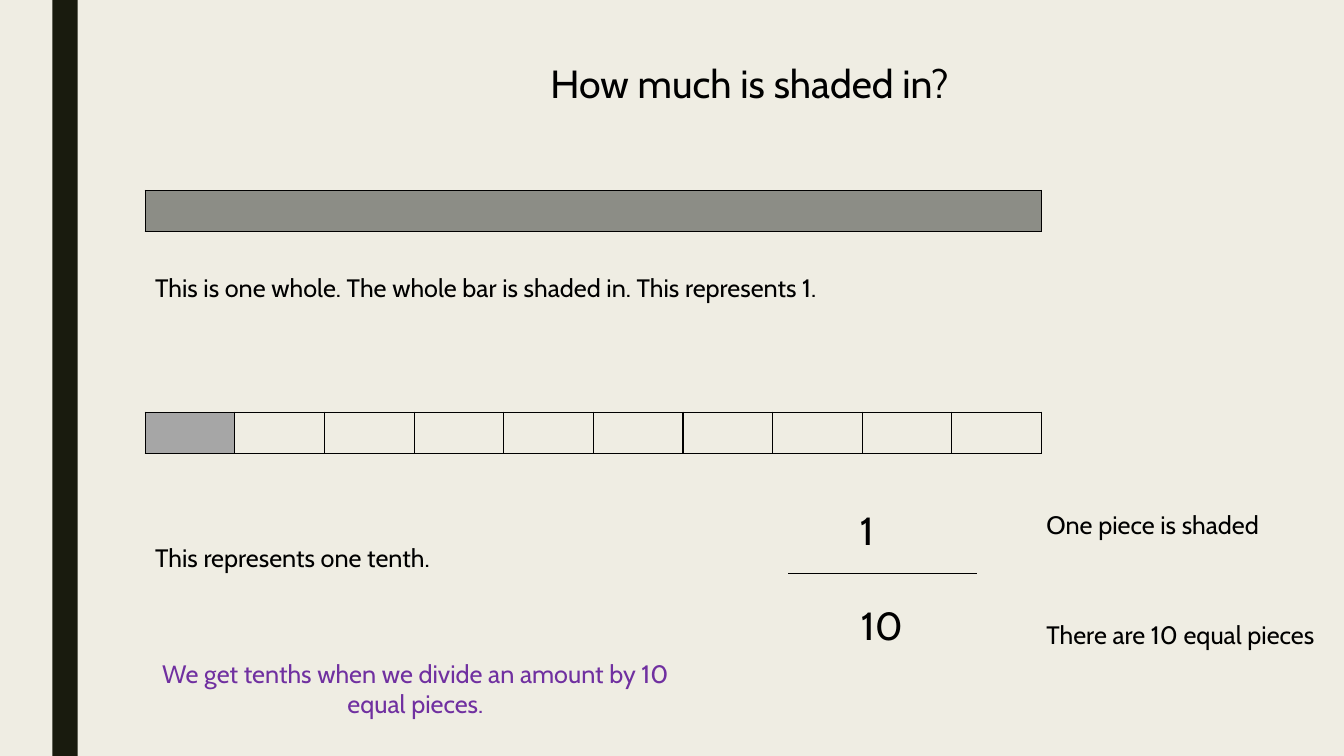
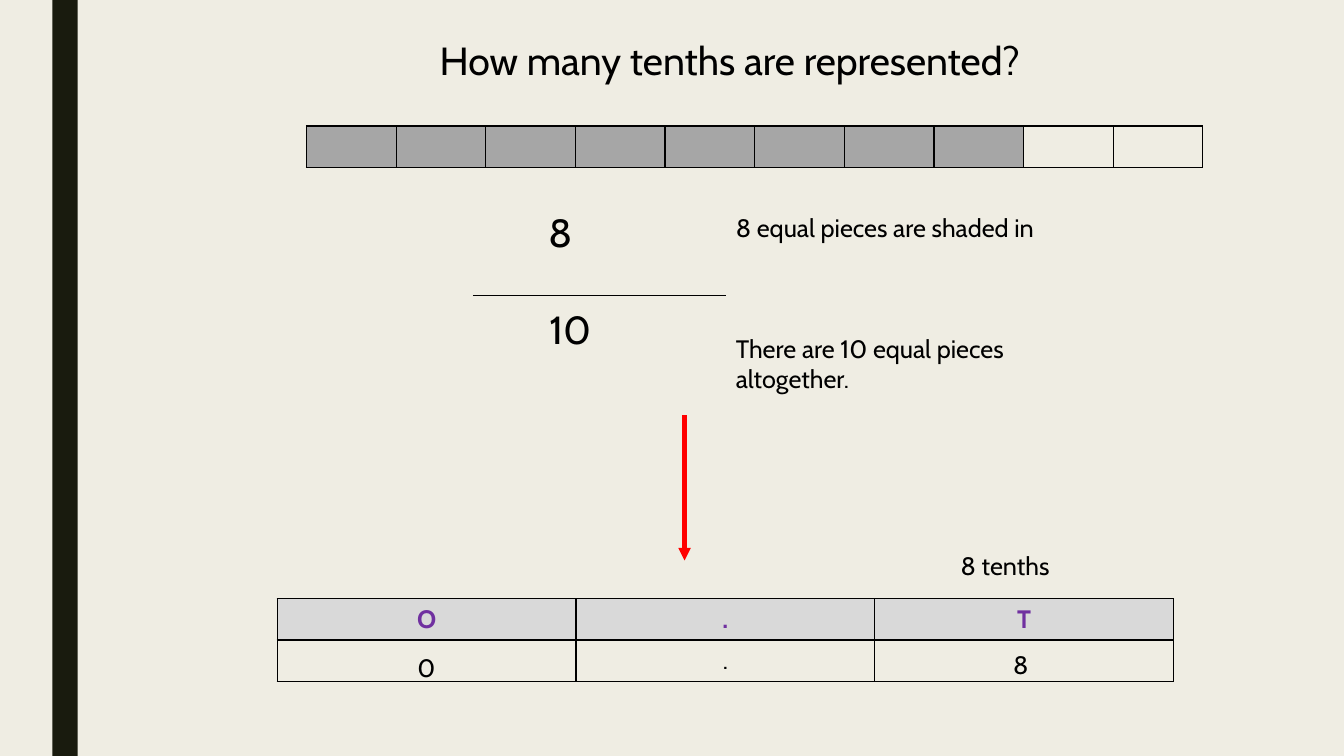
from lxml import etree
from pptx import Presentation
from pptx import util as u
from pptx.dml.color import RGBColor
from pptx.enum import shapes, text
from pptx.oxml import parse_xml
from pptx.oxml.ns import nsdecls, qn

Inches, Pt = u.Inches, u.Pt
rgb = RGBColor.from_string
CREAM, DARK, BLACK, PURPLE, RED = "EFEDE3", "191B0E", "000000", "7030A0", "FF0000"
WHOLE, SHADED, HEADER = "8C8D86", "A6A6A6", "D9D9D9"
LARGE, BODY = 28, 18
BAR_WIDTH, ROW_HEIGHT = 8.89, 0.41
LEFT, CENTER = text.PP_ALIGN.LEFT, text.PP_ALIGN.CENTER


def write(frame, words, size=BODY, color=BLACK, align=LEFT, bold=False):
    """Put one formatted line of words into a text frame."""
    para = frame.paragraphs[0]
    para.alignment = align
    span = para.add_run()
    span.text = words
    values = {"name": "Cabin", "size": Pt(size), "bold": bold}
    for name, value in values.items():
        setattr(span.font, name, value)
    span.font.color.rgb = rgb(color)


def add_grid(page, left, top, fills):
    """Add a bordered table; fills holds one list of cell colours per row, None for no fill."""
    rows, columns = len(fills), len(fills[0])
    table = page.shapes.add_table(rows, columns, Inches(left), Inches(top),
                                  Inches(BAR_WIDTH), Inches(ROW_HEIGHT * rows)).table
    table.first_row = table.horz_banding = False
    for column in table.columns:
        column.width = Inches(BAR_WIDTH / columns)
    for row, row_fills in zip(table.rows, fills):
        row.height = Inches(ROW_HEIGHT)
        for cell, fill in zip(row.cells, row_fills):
            borders = cell._tc.get_or_add_tcPr()
            for side in ("lnL", "lnR", "lnT", "lnB"):
                borders.append(parse_xml(
                    f'<a:{side} {nsdecls("a")} w="{Pt(1)}"><a:solidFill>'
                    f'<a:srgbClr val="{BLACK}"/></a:solidFill></a:{side}>'))
            if fill:
                cell.fill.solid()
                cell.fill.fore_color.rgb = rgb(fill)
            else:
                cell.fill.background()
    return table


deck = Presentation()
deck.slide_width, deck.slide_height = Inches(13.33), Inches(7.5)
master = deck.slide_master
master.background.fill.solid()
master.background.fill.fore_color.rgb = rgb(CREAM)

# Each title and text: words, (left, top, width, height), format
# Each line: start, end, colour, width, arrowhead
lessons = [
    {
        "title": ("How much is shaded in?", (5.36, 0.54, 4.33, 0.57)),
        "bars": [(1.44, 1.89, [WHOLE]),
                 (1.44, 4.09, [SHADED] + [None] * 9)],
        "texts": [
            ("This is one whole. The whole bar is shaded in. This represents 1.",
             (1.44, 2.65, 7.1, 0.4), {}),
            ("This represents one tenth.", (1.44, 5.33, 3.05, 0.4), {}),
            ("1", (8.43, 4.97, 0.65, 0.57), {"size": LARGE}),
            ("10", (8.44, 5.92, 0.65, 0.57), {"size": LARGE}),
            ("One piece is shaded", (10.28, 5, 2.98, 0.4), {}),
            ("There are 10 equal pieces", (10.28, 6.09, 2.98, 0.4), {}),
            ("We get tenths when we divide an amount by 10 equal pieces.",
             (1.44, 6.48, 5.36, 0.71), {"color": PURPLE, "align": CENTER}),
        ],
        "lines": [((7.82, 5.69), (9.69, 5.69), BLACK, 0.5, False)],
    },
    {
        "title": ("How many tenths are represented?", (4.26, 0.31, 6.1, 0.57)),
        "bars": [(3.04, 1.25, [SHADED] * 8 + [None] * 2)],
        "texts": [
            ("8", (5.34, 2.02, 0.87, 0.57), {"size": LARGE}),
            ("10", (5.35, 2.98, 0.87, 0.57), {"size": LARGE}),
            ("8 equal pieces are shaded in", (7.2, 2.06, 3.16, 0.71), {}),
            ("There are 10 equal pieces altogether.", (7.2, 3.26, 3.16, 0.71), {}),
            ("8 tenths", (9.43, 5.41, 1.6, 0.4), {}),
            ("0", (4.04, 6.42, 1.32, 0.4), {}),
            ("8", (9.95, 6.39, 1.32, 0.4), {}),
        ],
        "lines": [((4.69, 2.93), (7.2, 2.93), BLACK, 0.5, False),
                  ((6.79, 4.12), (6.79, 5.56), RED, 3, True)],
    },
]

for lesson in lessons:
    page = deck.slides.add_slide(deck.slide_layouts.get_by_name("Title Only"))

    words, place = lesson["title"]
    title = page.shapes.title
    title.left, title.top, title.width, title.height = map(Inches, place)
    title.text_frame.auto_size = text.MSO_AUTO_SIZE.NONE
    title.text_frame.vertical_anchor = text.MSO_ANCHOR.TOP
    write(title.text_frame, words, LARGE)

    for left, top, fills in lesson["bars"]:
        add_grid(page, left, top, [fills])

    for start, end, color, width, arrow in lesson["lines"]:
        line = page.shapes.add_connector(shapes.MSO_CONNECTOR.STRAIGHT,
                                         *map(Inches, start + end))
        line.line.color.rgb = rgb(color)
        line.line.width = Pt(width)
        if arrow:
            etree.SubElement(line.line._get_or_add_ln(), qn("a:tailEnd"), type="triangle")
        etree.SubElement(line._element.spPr, qn("a:effectLst"))

    for words, place, style in lesson["texts"]:
        box = page.shapes.add_textbox(*map(Inches, place))
        box.text_frame.word_wrap = True
        write(box.text_frame, words, **style)

# Place value table on the second slide
place_values = add_grid(page, 2.75, 5.94, [[HEADER] * 3, [None] * 3])
for column, heading in enumerate(["O", ".", "T"]):
    cell = place_values.cell(0, column)
    cell.vertical_anchor = text.MSO_ANCHOR.MIDDLE
    write(cell.text_frame, heading, color=PURPLE, align=CENTER, bold=True)
write(place_values.cell(1, 1).text_frame, ".", align=CENTER)

# The side band is drawn once and moved to the master, behind its placeholders
band = page.shapes.add_shape(shapes.MSO_SHAPE.RECTANGLE, Inches(0.52), 0,
                             Inches(0.25), deck.slide_height)
band.shadow.inherit = False
band.fill.solid()
band.fill.fore_color.rgb = rgb(DARK)
band.line.fill.background()
master.shapes._spTree.insert(2, band._element)

deck.save("out.pptx")
